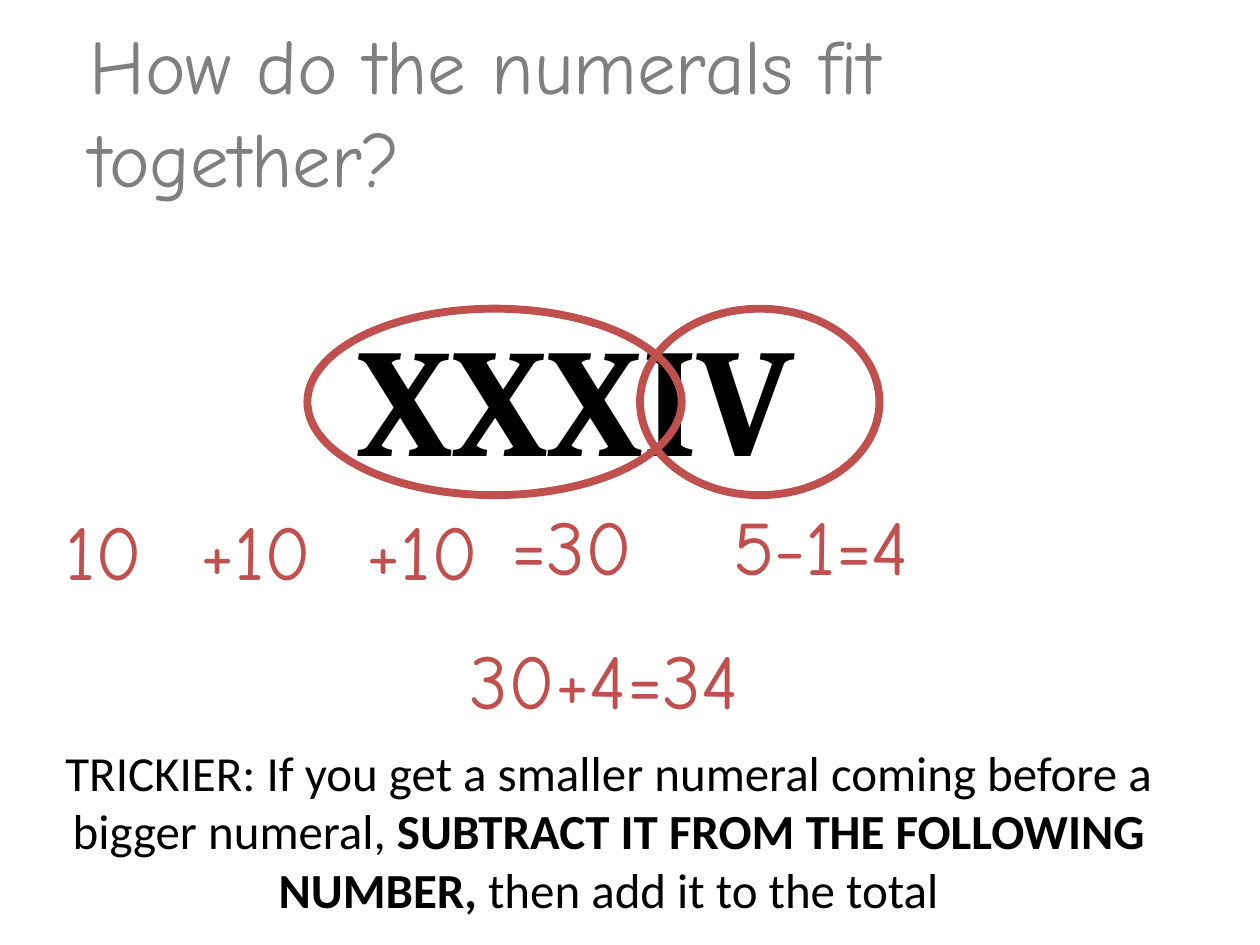
from dataclasses import dataclass

from pptx import Presentation
from pptx import util as u
from pptx.dml.color import RGBColor
from pptx.enum import shapes, text


@dataclass(frozen=True)
class Theme:
    ink: str = "000000"
    accent: str = "C0504D"
    muted: str = "7F7F7F"
    hand: str = "Comic Neue"
    serif: str = "Cambria"
    sans: str = "Calibri"
    numeral: int = 88
    large: int = 44
    body: int = 28
    ring: float = 4.5


class Deck:
    """Draws styled elements on a slide divided into 100 columns and 75 rows."""

    def __init__(self, theme):
        self.theme = theme
        self.prs = Presentation()
        self.prs.slide_width, self.prs.slide_height = u.Inches(10), u.Inches(7.5)
        self.s = self.prs.slides.add_slide(self.prs.slide_layouts[5])

    def box(self, col, row, cols, rows):
        dx, dy = self.prs.slide_width / 100, self.prs.slide_height / 75
        return [round(v) for v in (col * dx, row * dy, cols * dx, rows * dy)]

    def add_runs(self, tf, runs, size, name, color, align=text.PP_ALIGN.LEFT):
        p = tf.paragraphs[0]
        p.alignment = align
        for words, bold in runs:
            r = p.add_run()
            r.text = words
            values = {"size": u.Pt(size), "name": name, "bold": bold}
            for key, value in values.items():
                setattr(r.font, key, value)
            r.font.color.rgb = RGBColor.from_string(color)

    def title(self, words, *cells):
        sp, t = self.s.shapes.title, self.theme
        for key, value in zip(("left", "top", "width", "height"), self.box(*cells)):
            setattr(sp, key, value)
        tf = sp.text_frame
        frame = {"word_wrap": True, "auto_size": text.MSO_AUTO_SIZE.NONE,
                 "vertical_anchor": text.MSO_ANCHOR.MIDDLE}
        for key, value in frame.items():
            setattr(tf, key, value)
        self.add_runs(tf, [(words, False)], t.large, t.hand, t.muted)

    def label(self, runs, cells, size, name, color, wrap=False, **style):
        tf = self.s.shapes.add_textbox(*self.box(*cells)).text_frame
        tf.word_wrap = wrap
        tf.auto_size = text.MSO_AUTO_SIZE.SHAPE_TO_FIT_TEXT
        self.add_runs(tf, runs, size, name, color, **style)

    def sum(self, words, col, row, cols):
        t = self.theme
        self.label([(words, False)], (col, row, cols, 8.4), t.large, t.hand, t.accent)

    def ring(self, *cells):
        sp = self.s.shapes.add_shape(shapes.MSO_SHAPE.OVAL, *self.box(*cells))
        sp.shadow.inherit = False
        sp.fill.background()
        sp.line.color.rgb = RGBColor.from_string(self.theme.accent)
        sp.line.width = u.Pt(self.theme.ring)


def main():
    t = Theme()
    deck = Deck(t)
    deck.title("How do the numerals fit together?", 6.1, 2.5, 89.9, 12.5)
    rule = [
        ("TRICKIER: If you get a smaller numeral coming before a bigger numeral, ", False),
        ("SUBTRACT IT FROM THE FOLLOWING NUMBER, ", True),
        ("then add it to the total", False),
    ]
    deck.label(rule, (-0.9, 58.4, 98.4, 15.1), t.body, t.sans, t.ink,
               wrap=True, align=text.PP_ALIGN.CENTER)
    deck.label([("XXXIV", True)], (27.4, 23.5, 41.1, 15.8), t.numeral, t.serif, t.ink)
    for words, col, row, cols in (
        ("10", 4.2, 39.5, 8.6),
        ("+10", 14.9, 39.5, 11.5),
        ("+10", 28.1, 39.5, 11.5),
        ("=30", 39.6, 39.1, 12.7),
        ("5-1=4", 57.2, 39.1, 18),
        ("30+4=34", 36.3, 49.7, 27),
    ):
        deck.sum(words, col, row, cols)
    for col, cols in ((24.4, 29.7), (50.8, 19)):
        deck.ring(col, 24.5, cols, 14.8)
    deck.prs.save("out.pptx")


if __name__ == "__main__":
    main()
